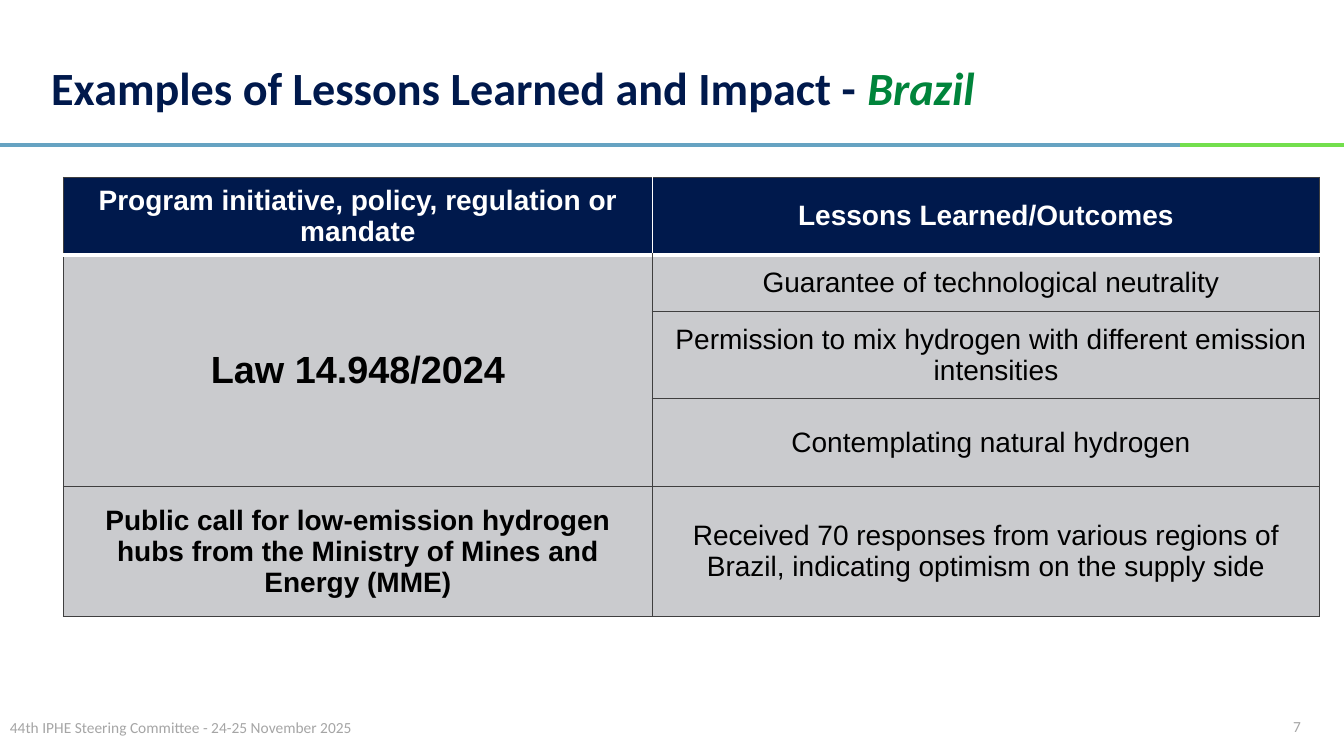
from lxml.etree import SubElement
from pptx import Presentation
from pptx.dml.color import RGBColor
from pptx.enum.shapes import MSO_CONNECTOR as Connector
from pptx.enum.text import MSO_ANCHOR as Anchor, PP_ALIGN as Align
from pptx.oxml import parse_xml
from pptx.oxml.ns import nsdecls, qn
from pptx.util import Inches, Pt

NAVY = RGBColor(0x00, 0x19, 0x4C)
GREEN = RGBColor(0x00, 0x84, 0x3B)
BLUE = RGBColor(0x66, 0xA3, 0xC2)
LIME = RGBColor(0x73, 0xDF, 0x4D)
MIST = RGBColor(0xCA, 0xCB, 0xCE)
GRAY = RGBColor(0xA5, 0xA5, 0xA5)
CHARCOAL = RGBColor(0x3F, 0x3F, 0x3F)
WHITE = RGBColor(0xFF, 0xFF, 0xFF)
BLACK = RGBColor(0x00, 0x00, 0x00)

WIDTH, HEIGHT = 13.33, 7.5
COLUMNS = [5.84, 6.62]
ROWS = [0.59, 0.56, 0.87, 0.87, 1.29]
HEADINGS = ["Program initiative, policy, regulation or mandate", "Lessons Learned/Outcomes"]
LAW_OUTCOMES = [
    "Guarantee of technological neutrality",
    "Permission to mix hydrogen with different emission intensities",
    "Contemplating natural hydrogen",
]
CALL = "Public call for low-emission hydrogen hubs from the Ministry of Mines and Energy (MME)"
CALL_OUTCOME = "Received 70 responses from various regions of Brazil, indicating optimism on the supply side"

TITLE = {"name": "Calibri", "size": Pt(33), "bold": True}
FOOTER = {"name": "Calibri", "size": Pt(11)}
BODY = {"name": "Arial", "size": Pt(20), "bold": False}
STRONG = {**BODY, "bold": True}
LAW = {**STRONG, "size": Pt(27)}


def add_run(paragraph, text, style, color):
    """Append a run with the given font values and colour."""
    run = paragraph.add_run()
    run.text = text
    for key, value in style.items():
        setattr(run.font, key, value)
    run.font.color.rgb = color


def add_text(slide, box, anchor, align=Align.LEFT):
    """Add an empty wrapping text box and return its frame and paragraph."""
    frame = slide.shapes.add_textbox(*map(Inches, box)).text_frame
    frame.word_wrap = True
    frame.vertical_anchor = anchor
    paragraph = frame.paragraphs[0]
    paragraph.alignment = align
    return frame, paragraph


def draw_rule(slide, top, split):
    """Draw the two-coloured rule across the slide."""
    for start, end, color in [(split, WIDTH, LIME), (0, split, BLUE)]:
        rule = slide.shapes.add_connector(
            Connector.STRAIGHT, *map(Inches, (start, top, end, top)))
        rule.line.color.rgb = color
        rule.line.width = Pt(2.5)
        SubElement(rule._element.spPr, qn("a:effectLst"))


def draw_title(slide, box):
    """Write the title with the country picked out."""
    frame, title = add_text(slide, box, Anchor.MIDDLE)
    frame.margin_bottom = 0
    title.line_spacing = 0.9
    add_run(title, "Examples of Lessons Learned and Impact - ", TITLE, NAVY)
    add_run(title, "Brazil", {**TITLE, "italic": True}, GREEN)


def set_borders(cell, sides):
    """Give the cell its left, right, top and bottom borders."""
    properties = cell._tc.get_or_add_tcPr()
    for index, side in enumerate("LRTB"):
        color, points = sides.get(side, (CHARCOAL, 1))
        properties.insert(index, parse_xml(
            f'<a:ln{side} {nsdecls("a")} w="{Pt(points)}"><a:solidFill>'
            f'<a:srgbClr val="{color}"/></a:solidFill></a:ln{side}>'))


def fill_cell(cell, text, style, color, hanging=False):
    """Write centred text into a cell."""
    cell.vertical_anchor = Anchor.MIDDLE
    paragraph = cell.text_frame.paragraphs[0]
    paragraph.alignment = Align.CENTER
    if hanging:
        properties = paragraph._p.get_or_add_pPr()
        properties.set("marL", str(Inches(0.2)))
        properties.set("indent", str(Inches(-0.1)))
    add_run(paragraph, text, style, color)


def draw_lessons(slide, left, top):
    """Build the table of policies and their outcomes."""
    size = left, top, sum(COLUMNS), sum(ROWS)
    table = slide.shapes.add_table(len(ROWS), len(COLUMNS), *map(Inches, size)).table
    table.horz_banding = False
    for column, width in zip(table.columns, COLUMNS):
        column.width = Inches(width)
    for row, height in zip(table.rows, ROWS):
        row.height = Inches(height)

    for r in range(len(ROWS)):
        for c in range(len(COLUMNS)):
            cell = table.cell(r, c)
            cell.fill.solid()
            cell.fill.fore_color.rgb = MIST if r else NAVY
            sides = {}
            if r == 0:
                sides = {"B": (WHITE, 3), "LR"[1 - c]: (WHITE, 1)}
            elif r == 1:
                sides = {"T": (WHITE, 3)}
            set_borders(cell, sides)

    for c, heading in enumerate(HEADINGS):
        fill_cell(table.cell(0, c), heading, STRONG, WHITE)
    table.cell(1, 0).merge(table.cell(len(LAW_OUTCOMES), 0))
    fill_cell(table.cell(1, 0), "Law 14.948/2024", LAW, BLACK)
    for r, outcome in enumerate(LAW_OUTCOMES, 1):
        fill_cell(table.cell(r, 1), outcome, BODY, BLACK, hanging=True)
    fill_cell(table.cell(4, 0), CALL, STRONG, BLACK)
    fill_cell(table.cell(4, 1), CALL_OUTCOME, BODY, BLACK)


def draw_footer(slide, event_box, number_box):
    """Write the event line and the slide number."""
    event = add_text(slide, event_box, Anchor.TOP)[1]
    add_run(event, "44th IPHE Steering Committee - 24-25 November 2025", FOOTER, GRAY)
    number = add_text(slide, number_box, Anchor.BOTTOM, Align.RIGHT)[1]
    add_run(number, "7", FOOTER, GRAY)


def main():
    """Build the slide and save it."""
    deck = Presentation()
    deck.slide_width, deck.slide_height = Inches(WIDTH), Inches(HEIGHT)
    slide = deck.slides.add_slide(deck.slide_layouts[6])
    draw_rule(slide, 1.44, 11.7)
    draw_title(slide, (0.41, 0.28, 11.19, 1.18))
    draw_lessons(slide, 0.63, 1.76)
    draw_footer(slide, (0, 7.07, 3.68, 0.25), (12.19, 6.95, 0.81, 0.4))
    deck.save("out.pptx")


if __name__ == "__main__":
    main()
